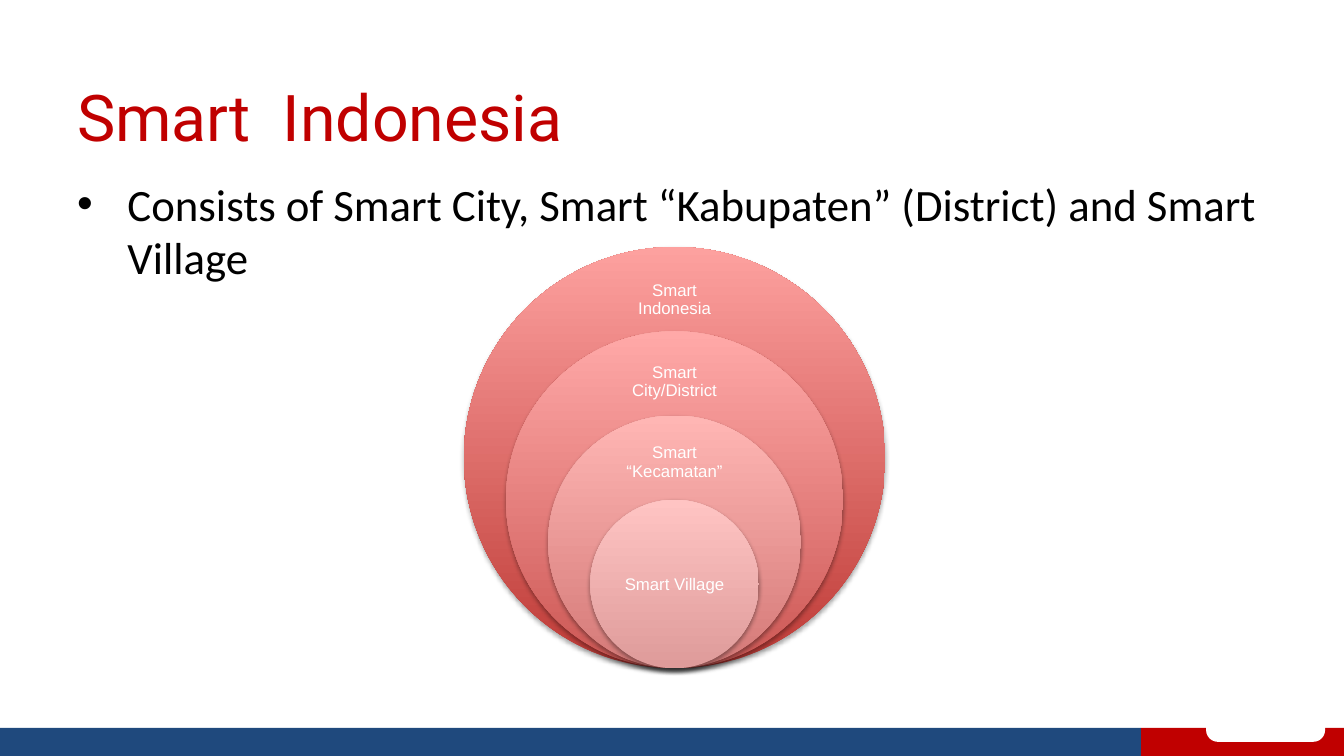
from lxml import etree
from pptx import Presentation
from pptx.dml.color import RGBColor
from pptx.enum.shapes import MSO_SHAPE
from pptx.enum.text import MSO_ANCHOR, PP_ALIGN
from pptx.oxml import parse_xml
from pptx.oxml.ns import nsdecls, qn
from pptx.util import Pt

RECTANGLE, ROUNDED, OVAL = MSO_SHAPE.RECTANGLE, MSO_SHAPE.ROUNDED_RECTANGLE, MSO_SHAPE.OVAL
TOP, MIDDLE = MSO_ANCHOR.TOP, MSO_ANCHOR.MIDDLE
LEFT, CENTER, JUSTIFY = PP_ALIGN.LEFT, PP_ALIGN.CENTER, PP_ALIGN.JUSTIFY

COLORS = {"red": "C00000", "blue": "1F497D", "white": "FFFFFF", "black": "000000"}


def add_text(shapes, box, text, font, size, color, anchor, alignment):
    textbox = shapes.add_textbox(*[Pt(length) for length in box])
    text_frame = textbox.text_frame
    text_frame.word_wrap = True
    text_frame.vertical_anchor = anchor
    text_frame.text = text
    paragraph = text_frame.paragraphs[0]
    paragraph.alignment = alignment
    run_font = paragraph.runs[0].font
    run_font.name = font
    run_font.size = Pt(size)
    run_font.color.rgb = RGBColor.from_string(COLORS[color])
    return text_frame


presentation = Presentation()
presentation.slide_width, presentation.slide_height = Pt(960), Pt(540)
slide = presentation.slides.add_slide(presentation.slide_layouts[6])

# Footer band with a white tab
for kind, box, color in [
    (RECTANGLE, (815, 520, 145, 20), "red"),
    (ROUNDED, (861.5, 479.5, 85, 50.4), "white"),
    (RECTANGLE, (0, 520, 815, 20), "blue"),
]:
    shape = slide.shapes.add_shape(kind, *[Pt(length) for length in box])
    shape.shadow.inherit = False
    shape.fill.solid()
    shape.fill.fore_color.rgb = RGBColor.from_string(COLORS[color])
    shape.line.fill.background()

# Title and bullet
add_text(slide.shapes, (48, 49, 864, 68), "Smart  Indonesia",
         "Roboto", 46, "red", MIDDLE, JUSTIFY)
body = add_text(slide.shapes, (48, 122.4, 864, 315),
                "Consists of Smart City, Smart “Kabupaten” (District) and Smart Village",
                "Calibri", 32, "black", TOP, LEFT)
properties = body.paragraphs[0]._p.get_or_add_pPr()
properties.set("marL", str(Pt(36)))
properties.set("indent", str(-Pt(36)))
etree.SubElement(properties, qn("a:buFont")).set("typeface", "Arial")
etree.SubElement(properties, qn("a:buChar")).set("char", "•")

# Nested circles that share their lowest point
CENTER_X, BOTTOM, DIAMETER = 481.8, 477.4, 301
LABEL_WIDTH, LABEL_INSET = 85, 6.4
circles = [  # label, label top, label height, lower colour, upper colour
    ("Smart Indonesia", 191.5, 45.4, "BE3A36", "FDA19F"),
    ("Smart City/District", 251.3, 43.2, "CC5754", "FFA9A8"),
    ("Smart “Kecamatan”", 310.3, 40.3, "D47977", "FFB6B4"),
    ("Smart Village", 387.4, 60.5, "DE9B9A", "FFC4C3"),
]
diagram = slide.shapes.add_group_shape()
for level, (label, label_top, label_height, lower, upper) in enumerate(circles):
    size = DIAMETER * (1 - level / 5)
    circle = diagram.shapes.add_shape(
        OVAL, Pt(CENTER_X - size / 2), Pt(BOTTOM - size), Pt(size), Pt(size))
    circle.line.fill.background()
    circle.fill.gradient()
    circle.fill.gradient_angle = 90
    for stop, color in zip(circle.fill.gradient_stops, (lower, upper)):
        stop.color.rgb = RGBColor.from_string(color)
    circle._element.spPr.append(parse_xml(
        f'<a:effectLst {nsdecls("a")}>'
        f'<a:outerShdw blurRad="{Pt(3.1)}" dist="{Pt(1.8)}" dir="5400000" rotWithShape="0">'
        f'<a:srgbClr val="{COLORS["black"]}"><a:alpha val="35000"/></a:srgbClr>'
        '</a:outerShdw></a:effectLst>'))

    text_frame = add_text(
        diagram.shapes, (CENTER_X - LABEL_WIDTH / 2, label_top, LABEL_WIDTH, label_height),
        label, "Arial", 12, "white", MIDDLE, CENTER)
    text_frame.margin_left = text_frame.margin_right = Pt(LABEL_INSET)
    text_frame.margin_top = text_frame.margin_bottom = Pt(LABEL_INSET)
    text_frame.paragraphs[0].line_spacing = 0.9

presentation.save("out.pptx")
